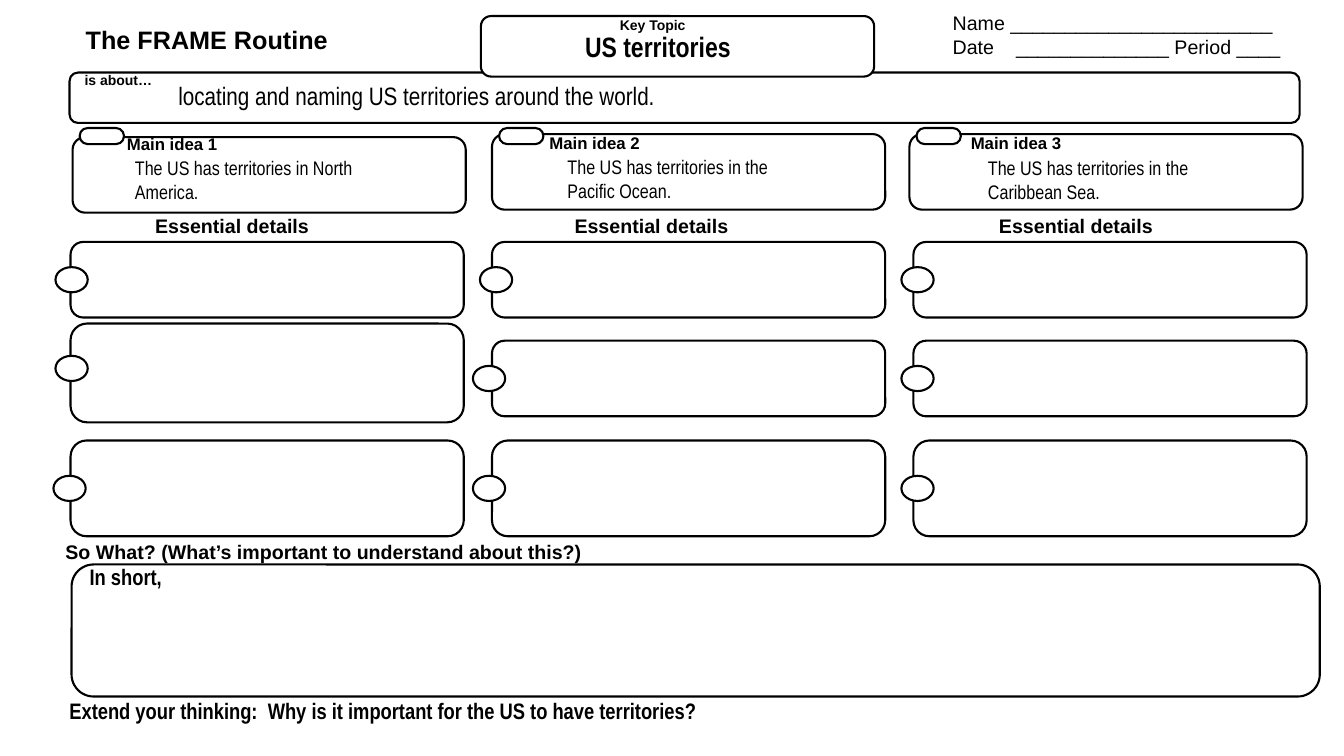
import pptx
import pptx.util
import pptx.dml.color
import pptx.enum.shapes
import pptx.enum.text
import pptx.oxml
import pptx.oxml.ns

COLORS = {"ink": "000000", "paper": "FFFFFF"}
ROUNDED = pptx.enum.shapes.MSO_SHAPE.ROUNDED_RECTANGLE
OVAL = pptx.enum.shapes.MSO_SHAPE.OVAL
ALIGN = pptx.enum.text.PP_ALIGN

deck = pptx.Presentation()
deck.slide_width = pptx.util.Inches(13.33)
deck.slide_height = pptx.util.Inches(7.5)
page = deck.slides.add_slide(deck.slide_layouts[5])


def draw_shape(kind, bounds, filled=False, corner=0.167):
    shape = page.shapes.add_shape(kind, *map(pptx.util.Inches, bounds))
    shape.shadow.inherit = False
    if kind == ROUNDED:
        shape.adjustments[0] = corner
    if filled:
        shape.fill.solid()
        shape.fill.fore_color.rgb = pptx.dml.color.RGBColor.from_string(COLORS["paper"])
    else:
        shape.fill.background()
    shape.line.color.rgb = pptx.dml.color.RGBColor.from_string(COLORS["ink"])
    shape.line.width = pptx.util.Pt(1.5)


def write_text(bounds, text, size, name="Arial", bold=False, align=ALIGN.LEFT, tab=None, box=None):
    if box is None:
        box = page.shapes.add_textbox(0, 0, 0, 0)
    for side, length in zip(("left", "top", "width", "height"), bounds):
        setattr(box, side, pptx.util.Inches(length))
    frame = box.text_frame
    frame.text = text
    settings = {
        "word_wrap": True,
        "auto_size": pptx.enum.text.MSO_AUTO_SIZE.NONE,
        "vertical_anchor": pptx.enum.text.MSO_ANCHOR.TOP,
        "margin_left": pptx.util.Inches(0.1),
        "margin_right": pptx.util.Inches(0.1),
        "margin_top": pptx.util.Inches(0.05),
        "margin_bottom": pptx.util.Inches(0.05),
    }
    for key, value in settings.items():
        setattr(frame, key, value)
    for para in frame.paragraphs:
        para.alignment = align
        if tab:
            stops = pptx.oxml.parse_xml(
                f'<a:tabLst {pptx.oxml.ns.nsdecls("a")}>'
                f'<a:tab pos="{pptx.util.Inches(tab)}" algn="l"/></a:tabLst>')
            para._p.get_or_add_pPr().append(stops)
        for span in para.runs:
            for key, value in {"name": name, "size": pptx.util.Pt(size), "bold": bold}.items():
                setattr(span.font, key, value)
            span.font.color.rgb = pptx.dml.color.RGBColor.from_string(COLORS["ink"])


write_text((0.75, 0.19, 3.84, 0.43), "The FRAME Routine", 18, bold=True, box=page.shapes.title)

draw_shape(ROUNDED, (0.69, 0.72, 12.2, 0.5))
draw_shape(ROUNDED, (0.71, 5.6, 12.38, 1.31))
draw_shape(ROUNDED, (4.77, 0.16, 3.9, 0.6), filled=True)

column_left, column_step, column_width = 0.7, 4.18, 3.9
marker_width, marker_height = 0.32, 0.25
detail_rows = [(2.4, 0.75, 2.65), (3.38, 0.75, 3.63), (4.37, 0.95, 4.72)]
tall_row = (3.21, 0.98, 3.53)
marker_lefts = [(0.55, 0.55, 0.53), (4.76, 4.69, 4.69), (8.94, 8.94, 8.94)]

for column, lefts in enumerate(marker_lefts):
    left = column_left + column * column_step
    for row, marker_left in enumerate(lefts):
        top, height, marker_top = tall_row if (column, row) == (0, 1) else detail_rows[row]
        draw_shape(ROUNDED, (left, top, column_width, height))
        draw_shape(OVAL, (marker_left, marker_top, marker_width, marker_height), filled=True)

main_ideas = [
    {"box": (0.72, 1.36), "label": (1.16, 1.28), "idea": (1.24, 1.5), "heading": 1.44,
     "text": "The US has territories in North America."},
    {"box": (4.88, 1.33), "label": (5.35, 1.27), "idea": (5.53, 1.49), "heading": 5.6,
     "text": "The US has territories in the Pacific Ocean."},
    {"box": (9.02, 1.33), "label": (9.53, 1.27), "idea": (9.7, 1.5), "heading": 9.81,
     "text": "The US has territories in the Caribbean Sea."},
]
for number, main in enumerate(main_ideas, 1):
    draw_shape(ROUNDED, (*main["box"], column_width, 0.75))
    draw_shape(ROUNDED, (main["box"][0] + 0.07, 1.27, 0.44, 0.16), filled=True, corner=0.5)
    write_text((*main["label"], 1.62, 0.32), f"Main idea {number}", 12, bold=True)
    write_text((*main["idea"], 2.65, 0.57), main["text"], 14, "Arial Narrow")
    write_text((main["heading"], 2.07, 2.54, 0.36), "Essential details", 14, bold=True)

write_text((6.05, 0.11, 1.27, 0.29), "Key Topic", 10, bold=True)
write_text((5.22, 0.24, 2.61, 0.44), "US territories", 20, "Arial Narrow", True, ALIGN.CENTER)
write_text((0.74, 0.66, 1.28, 0.29), "is about…", 10, bold=True)
write_text((1.67, 0.75, 6.06, 0.4), "locating and naming US territories around the world.", 18, "Arial Narrow")
write_text((0.55, 5.31, 7.81, 0.36), "So What? (What’s important to understand about this?)", 14, bold=True)
write_text((0.79, 5.54, 1.25, 0.37), "In short,", 16, "Arial Narrow", True)
write_text((9.35, 0.06, 3.7, 0.57),
           "Name ________________________\nDate\t______________ Period ____", 14, tab=0.63)
write_text((0.59, 6.87, 8.47, 0.37),
           "Extend your thinking:  Why is it important for the US to have territories?",
           16, "Arial Narrow", True)

deck.save("out.pptx")
